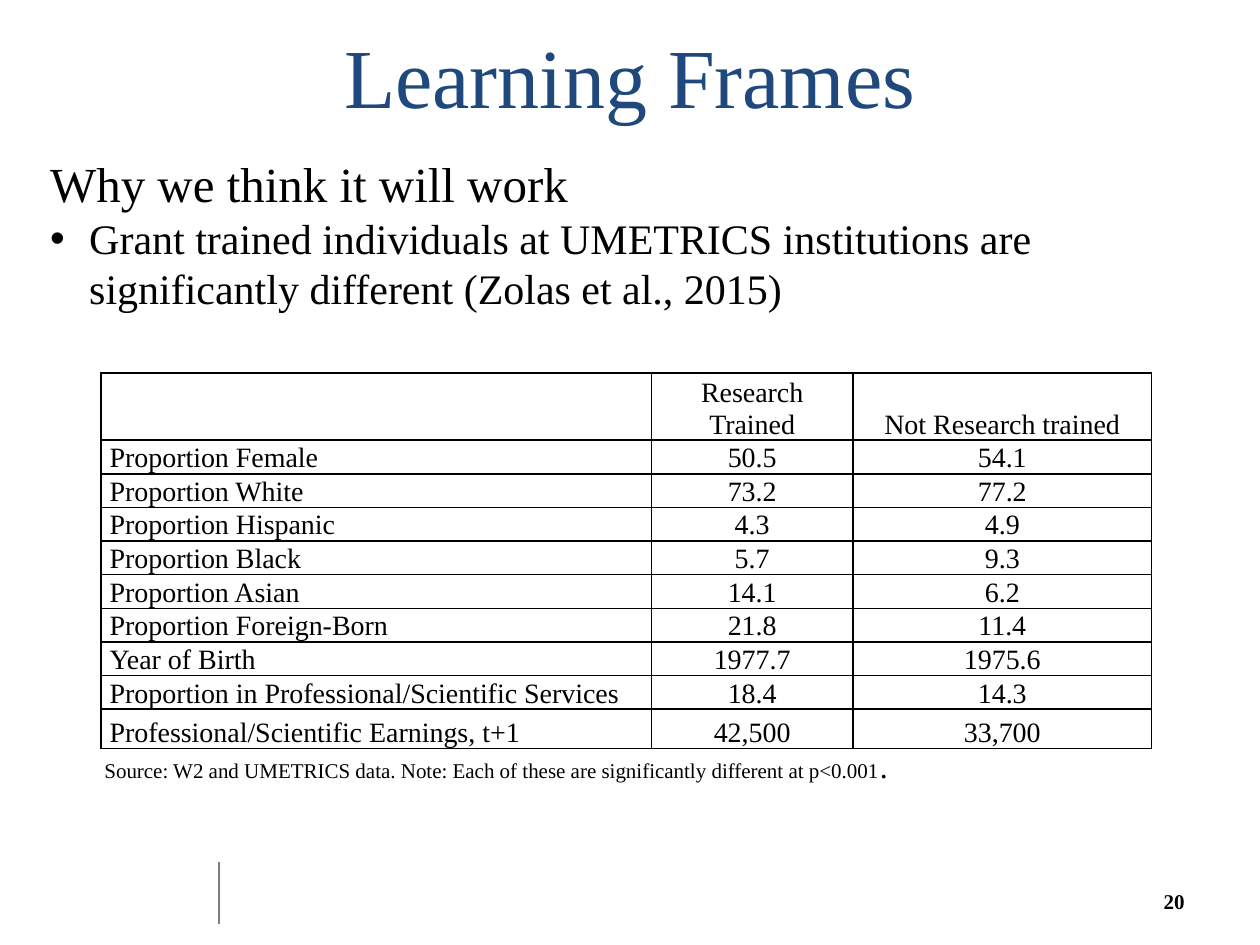
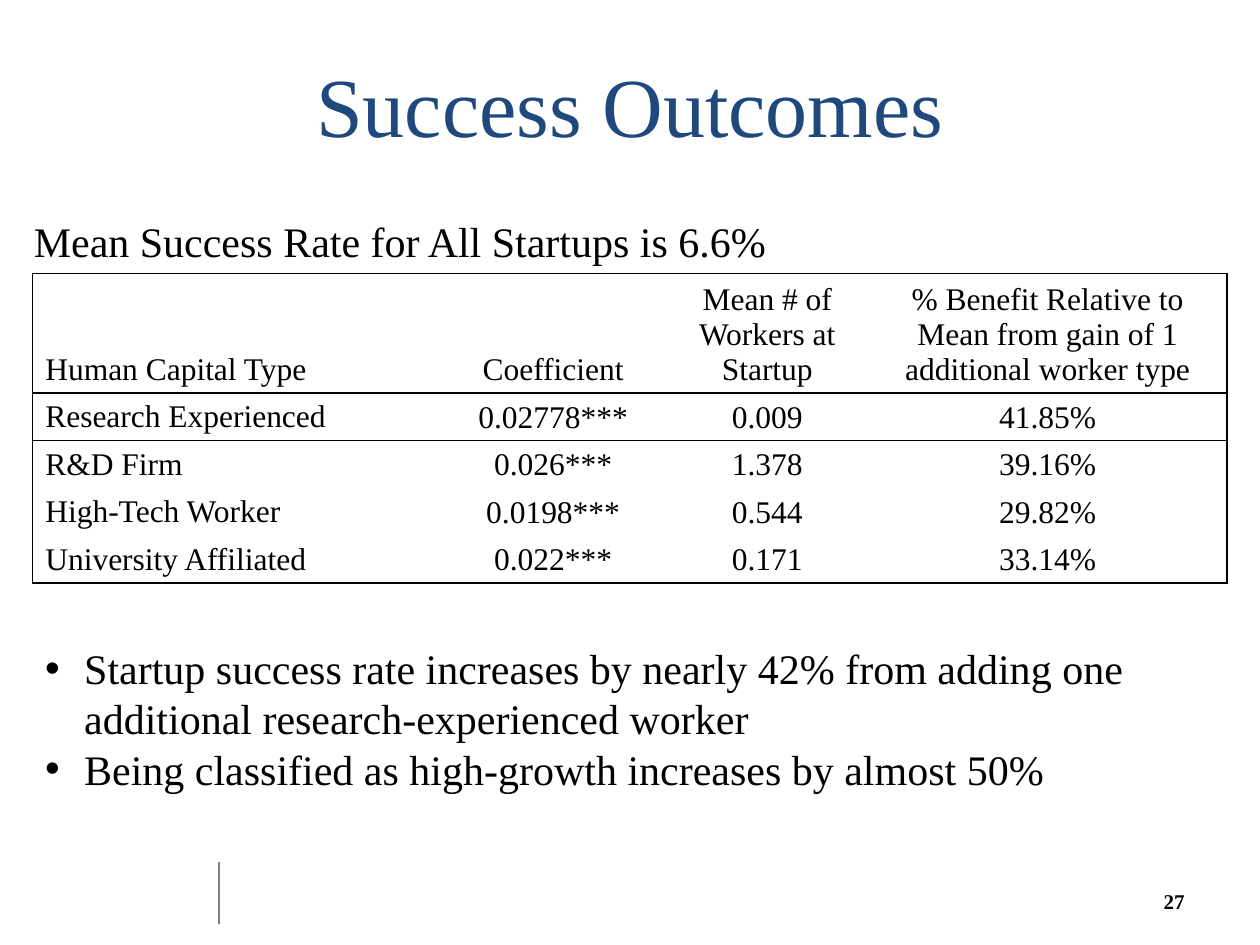
from lxml.etree import SubElement
from pptx import Presentation
from pptx.dml.color import RGBColor
from pptx.enum.shapes import MSO_CONNECTOR
from pptx.enum.text import MSO_ANCHOR, MSO_AUTO_SIZE, PP_ALIGN
from pptx.oxml import parse_xml
from pptx.oxml.ns import nsdecls, qn
from pptx.util import Inches, Pt

FONT = "Times New Roman"
COLORS = {"title": "1F497D", "text": "000000", "border": "000000", "divider": "808080"}
# The slide is a grid of 100 columns by 75 rows.
COLUMNS, ROWS = 100, 75
WIDTH, HEIGHT = Inches(10), Inches(7.5)
BULLET_INDENT = 3.1


def across(columns):
    return round(WIDTH * columns / COLUMNS)


def down(rows):
    return round(HEIGHT * rows / ROWS)


def place(box):
    left, top, width, height = box
    return across(left), down(top), across(width), down(height)


def style(font, size, color="text", bold=False):
    font.name, font.size, font.bold = FONT, Pt(size), bold
    font.color.rgb = RGBColor.from_string(COLORS[color])


def write(para, text, size, color="text", bold=False, align=PP_ALIGN.LEFT, bullet=False):
    if bullet:
        properties = para._p.get_or_add_pPr()
        properties.set("marL", str(across(BULLET_INDENT)))
        properties.set("indent", str(-across(BULLET_INDENT)))
        SubElement(properties, qn("a:buFont")).set("typeface", "Arial")
        SubElement(properties, qn("a:buChar")).set("char", "•")
    para.alignment = align
    span = para.add_run()
    span.text = text
    style(span.font, size, color, bold)


def add_text(page, box, *lines, anchor=MSO_ANCHOR.TOP):
    """Add a text box; each line is a dict of arguments for write."""
    frame = page.shapes.add_textbox(*place(box)).text_frame
    frame.word_wrap = True
    frame.vertical_anchor = anchor
    for number, line in enumerate(lines):
        para = frame.add_paragraph() if number else frame.paragraphs[0]
        write(para, **line)
    return frame


def add_page(deck, title, title_top, number):
    """Add a slide with its title, footer divider and page number."""
    page = deck.slides.add_slide(deck.slide_layouts[5])
    heading = page.shapes.title
    heading.left, heading.top, heading.width, heading.height = place((5, title_top, 90, 12.5))
    frame = heading.text_frame
    frame.auto_size = MSO_AUTO_SIZE.NONE
    frame.vertical_anchor = MSO_ANCHOR.MIDDLE
    write(frame.paragraphs[0], title, 48, color="title", align=PP_ALIGN.CENTER)

    divider = page.shapes.add_connector(
        MSO_CONNECTOR.STRAIGHT, across(17.4), down(68.4), across(17.4), down(73.3))
    divider.line.color.rgb = RGBColor.from_string(COLORS["divider"])
    divider.line.width = Pt(1.25)
    SubElement(divider._element.spPr, qn("a:effectLst"))

    add_text(page, (71.7, 69.5, 23.3, 4),
             dict(text=number, size=12, bold=True, align=PP_ALIGN.RIGHT),
             anchor=MSO_ANCHOR.MIDDLE)
    return page


def set_borders(cell, edges):
    """Draw the edges that are true, in the order left, right, top, bottom."""
    properties = cell._tc.get_or_add_tcPr()
    for position, (side, drawn) in enumerate(zip("LRTB", edges)):
        fill = (f'<a:solidFill><a:srgbClr val="{COLORS["border"]}"/></a:solidFill>'
                if drawn else "<a:noFill/>")
        properties.insert(position, parse_xml(
            f'<a:ln{side} {nsdecls("a")} w="{Pt(1)}">{fill}</a:ln{side}>'))


def add_data_table(page, box, widths, heights, records, *, size, ruled_rows,
                   inner_columns, anchor, label_inset, value_insets):
    """Fill a table; ruled_rows holds the row boundaries that get a line.

    label_inset is the side inset of the first column; value_insets are
    the side and top insets of the other body cells.
    """
    table = page.shapes.add_table(len(records), len(widths), *place(box)).table
    table.first_row = table.horz_banding = False
    for column, width in zip(table.columns, widths):
        column.width = across(width)
    for row, height in zip(table.rows, heights):
        row.height = down(height)
    last = len(widths) - 1
    for row, record in enumerate(records):
        for column, text in enumerate(record):
            cell = table.cell(row, column)
            cell.fill.background()
            cell.vertical_anchor = anchor if row else MSO_ANCHOR.BOTTOM
            side, top = value_insets if row and column else (label_inset, 0)
            cell.margin_left = cell.margin_right = across(side)
            cell.margin_top, cell.margin_bottom = down(top), 0
            if not row:
                cell.margin_bottom = down(0.5 if label_inset == 1 else 0)
            set_borders(cell, (inner_columns or column == 0,
                               inner_columns or column == last,
                               row in ruled_rows, row + 1 in ruled_rows))
            if text:
                write(cell.text_frame.paragraphs[0], text, size,
                      align=PP_ALIGN.CENTER if column else PP_ALIGN.LEFT)


def build_learning_frames(deck):
    page = add_page(deck, "Learning Frames", -0.3, "20")
    add_text(page, (3, 11.7, 95, 15.8),
             dict(text="Why we think it will work", size=28),
             dict(text="Grant trained individuals at UMETRICS institutions are "
                       "significantly different (Zolas et al., 2015)",
                  size=24, bullet=True))
    records = [
        ("", "Research Trained", "Not Research trained"),
        ("Proportion Female", "50.5", "54.1"),
        ("Proportion White", "73.2", "77.2"),
        ("Proportion Hispanic", "4.3", "4.9"),
        ("Proportion Black", "5.7", "9.3"),
        ("Proportion Asian", "14.1", "6.2"),
        ("Proportion Foreign-Born", "21.8", "11.4"),
        ("Year of Birth", "1977.7", "1975.6"),
        ("Proportion in Professional/Scientific Services", "18.4", "14.3"),
        ("Professional/Scientific Earnings, t+1", "42,500", "33,700"),
    ]
    add_data_table(page, (8, 29.6, 83.4, 29.8), (43.7, 16, 23.7),
                   [5.3] + [2.67] * 8 + [3.1], records, size=16,
                   ruled_rows=range(len(records) + 1), inner_columns=True,
                   anchor=MSO_ANCHOR.BOTTOM, label_inset=0.7, value_insets=(0.7, 0))
    source = add_text(page, (7.3, 58.8, 84.1, 4),
                      dict(text="Source: W2 and UMETRICS data. Note: Each of these are "
                                "significantly different at p<0.001", size=12))
    write(source.paragraphs[0], ".", 18)


def build_success_outcomes(deck):
    page = add_page(deck, "Success Outcomes", 2, "27")
    records = [
        ("Human Capital Type", "Coefficient", "Mean # of Workers at Startup",
         "% Benefit Relative to Mean from gain of 1 additional worker type"),
        ("Research Experienced", "0.02778***", "0.009", "41.85%"),
        ("R&D Firm", "0.026***", "1.378", "39.16%"),
        ("High-Tech Worker", "0.0198***", "0.544", "29.82%"),
        ("University Affiliated", "0.022***", "0.171", "33.14%"),
    ]
    add_data_table(page, (2.6, 21.7, 94.8, 24.4), (32.3, 18, 16, 28.5),
                   [9.3] + [3.77] * 4, records, size=18,
                   ruled_rows=(0, 1, 2, len(records)), inner_columns=False,
                   anchor=MSO_ANCHOR.MIDDLE, label_inset=1, value_insets=(0.1, 0.1))
    add_text(page, (1.7, 16.6, 64.2, 5),
             dict(text="Mean Success Rate for All Startups is 6.6%", size=24))
    findings = ("Startup success rate increases by nearly 42% from adding one "
                "additional research-experienced worker",
                "Being classified as high-growth increases by almost 50%")
    add_text(page, (2.6, 50.5, 94.8, 16.2),
             *(dict(text=finding, size=24, bullet=True) for finding in findings))


def main():
    deck = Presentation()
    deck.slide_width, deck.slide_height = WIDTH, HEIGHT
    build_learning_frames(deck)
    build_success_outcomes(deck)
    deck.save("out.pptx")


if __name__ == "__main__":
    main()
